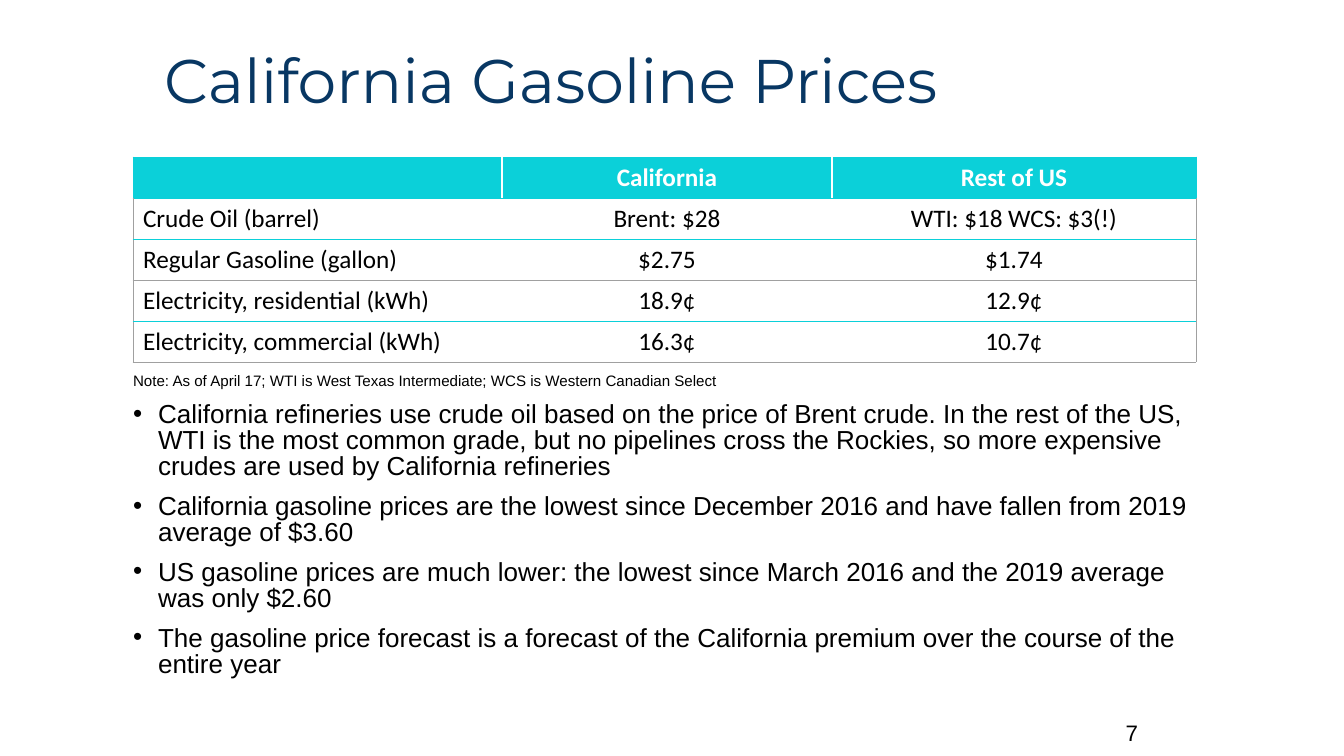
from dataclasses import dataclass

from lxml.etree import SubElement
from pptx import Presentation
from pptx.dml.color import RGBColor
from pptx.enum.text import MSO_ANCHOR, MSO_AUTO_SIZE, PP_ALIGN
from pptx.oxml.ns import qn
from pptx.util import Emu, Pt

PX_PER_INCH = 100.8


@dataclass(frozen=True)
class Theme:
    navy: str = "083763"
    teal: str = "0BD0D9"
    gray: str = "A0A0A0"
    black: str = "000000"
    white: str = "FFFFFF"
    title_font: str = "Montserrat"
    body_font: str = "Arial"
    table_font: str = "Calibri"
    title_size: float = 44
    table_size: float = 18
    list_size: float = 18.6
    note_size: float = 10.8
    number_size: float = 16
    rule_width: float = 0.5


@dataclass(frozen=True)
class Area:
    left: int
    top: int
    width: int
    height: int


@dataclass(frozen=True)
class PriceRow:
    item: str
    california: str
    rest_of_us: str
    rule_below: str


THEME = Theme()

TITLE_AREA = Area(154, 26, 1098, 115)
TABLE_AREA = Area(133, 157, 1063, 205)
BODY_AREA = Area(123, 369, 1098, 312)
NUMBER_AREA = Area(950, 713, 198, 40)
COLUMN_WIDTHS = (369, 330, 364)
LIST_INDENT = 25

PRICE_ROWS = (
    PriceRow("", "California", "Rest of US", THEME.teal),
    PriceRow("Crude Oil (barrel)", "Brent: $28", "WTI: $18 WCS: $3(!)", THEME.teal),
    PriceRow("Regular Gasoline (gallon)", "$2.75", "$1.74", THEME.gray),
    PriceRow("Electricity, residential (kWh)", "18.9¢", "12.9¢", THEME.teal),
    PriceRow("Electricity, commercial (kWh)", "16.3¢", "10.7¢", THEME.gray),
)
NOTE = "Note: As of April 17; WTI is West Texas Intermediate; WCS is Western Canadian Select"
POINTS = (
    "California refineries use crude oil based on the price of Brent crude. In the rest of "
    "the US, WTI is the most common grade, but no pipelines cross the Rockies, so more "
    "expensive crudes are used by California refineries",
    "California gasoline prices are the lowest since December 2016 and have fallen from 2019 "
    "average of $3.60",
    "US gasoline prices are much lower: the lowest since March 2016 and the 2019 average "
    "was only $2.60",
    "The gasoline price forecast is a forecast of the California premium over the course of "
    "the entire year",
)


def px(length: int) -> Emu:
    return Emu(round(length * 914400 / PX_PER_INCH))


def place(shape, area: Area) -> None:
    for name in ("left", "top", "width", "height"):
        setattr(shape, name, px(getattr(area, name)))


def set_all(target, values: dict) -> None:
    for name, value in values.items():
        setattr(target, name, value)


def write(para, text: str, font: str, size: float, color: str, bold: bool = False, **layout) -> None:
    span = para.add_run()
    span.text = text
    set_all(span.font, {"name": font, "size": Pt(size), "bold": bold})
    span.font.color.rgb = RGBColor.from_string(color)
    set_all(para, layout)


def set_bullet(para, mark: str = "") -> None:
    """Give the paragraph a hanging bullet, or none when the mark is empty."""
    props = para._p.get_or_add_pPr()
    indent = px(LIST_INDENT) if mark else 0
    props.set("marL", str(indent))
    props.set("indent", str(-indent))
    if mark:
        SubElement(props, qn("a:buFont"), typeface=THEME.body_font)
        SubElement(props, qn("a:buChar"), char=mark)
    else:
        SubElement(props, qn("a:buNone"))


def set_borders(cell, colors: dict[str, str]) -> None:
    """Draw cell edges; the elements go before the cell's fill."""
    props = cell._tc.get_or_add_tcPr()
    for edge in ("L", "R", "T", "B"):
        if edge in colors:
            line = SubElement(props, qn(f"a:ln{edge}"), w=str(Pt(THEME.rule_width)))
            fill = SubElement(line, qn("a:solidFill"))
            SubElement(fill, qn("a:srgbClr"), val=colors[edge])


def add_title(page) -> None:
    title = page.shapes.title
    place(title, TITLE_AREA)
    set_all(title.text_frame, {"vertical_anchor": MSO_ANCHOR.MIDDLE, "auto_size": MSO_AUTO_SIZE.NONE})
    write(title.text_frame.paragraphs[0], "California Gasoline Prices", THEME.title_font,
          THEME.title_size, THEME.navy, alignment=PP_ALIGN.LEFT, line_spacing=0.9)


def add_price_table(page) -> None:
    area = TABLE_AREA
    table = page.shapes.add_table(len(PRICE_ROWS), len(COLUMN_WIDTHS), px(area.left), px(area.top),
                                  px(area.width), px(area.height)).table
    table.horz_banding = False
    for column, width in zip(table.columns, COLUMN_WIDTHS):
        column.width = px(width)
    for i, row in enumerate(PRICE_ROWS):
        table.rows[i].height = px(area.height // len(PRICE_ROWS))
        is_header = i == 0
        side = THEME.teal if is_header else THEME.gray
        above = PRICE_ROWS[max(i - 1, 0)].rule_below
        for j, text in enumerate((row.item, row.california, row.rest_of_us)):
            cell = table.cell(i, j)
            edges = {"T": above, "B": row.rule_below}
            if j == 0:
                edges["L"] = side
            if j == len(COLUMN_WIDTHS) - 1:
                edges["R"] = side
            set_borders(cell, edges)
            cell.fill.solid()
            cell.fill.fore_color.rgb = RGBColor.from_string(THEME.teal if is_header else THEME.white)
            if text:
                write(cell.text_frame.paragraphs[0], text, THEME.table_font, THEME.table_size,
                      THEME.white if is_header else THEME.black, is_header,
                      alignment=PP_ALIGN.CENTER if j else PP_ALIGN.LEFT)


def add_body(page) -> None:
    body = page.placeholders[1]
    place(body, BODY_AREA)
    frame = body.text_frame
    set_all(frame, {"word_wrap": True, "auto_size": MSO_AUTO_SIZE.NONE})
    note = frame.paragraphs[0]
    set_bullet(note)
    write(note, NOTE, THEME.body_font, THEME.note_size, THEME.black,
          line_spacing=0.83, space_before=Pt(0))
    for point in POINTS:
        para = frame.add_paragraph()
        set_bullet(para, "•")
        write(para, point, THEME.body_font, THEME.list_size, THEME.black,
              line_spacing=0.83, space_before=Pt(10))


def add_page_number(page) -> None:
    area = NUMBER_AREA
    box = page.shapes.add_textbox(px(area.left), px(area.top), px(area.width), px(area.height))
    set_all(box.text_frame, {"word_wrap": True, "vertical_anchor": MSO_ANCHOR.MIDDLE})
    write(box.text_frame.paragraphs[0], "7", THEME.body_font, THEME.number_size, THEME.black,
          alignment=PP_ALIGN.RIGHT)


def main() -> None:
    deck = Presentation()
    set_all(deck, {"slide_width": px(1344), "slide_height": px(756)})
    page = deck.slides.add_slide(deck.slide_layouts[1])
    add_title(page)
    add_price_table(page)
    add_body(page)
    add_page_number(page)
    deck.save("out.pptx")


if __name__ == "__main__":
    main()
